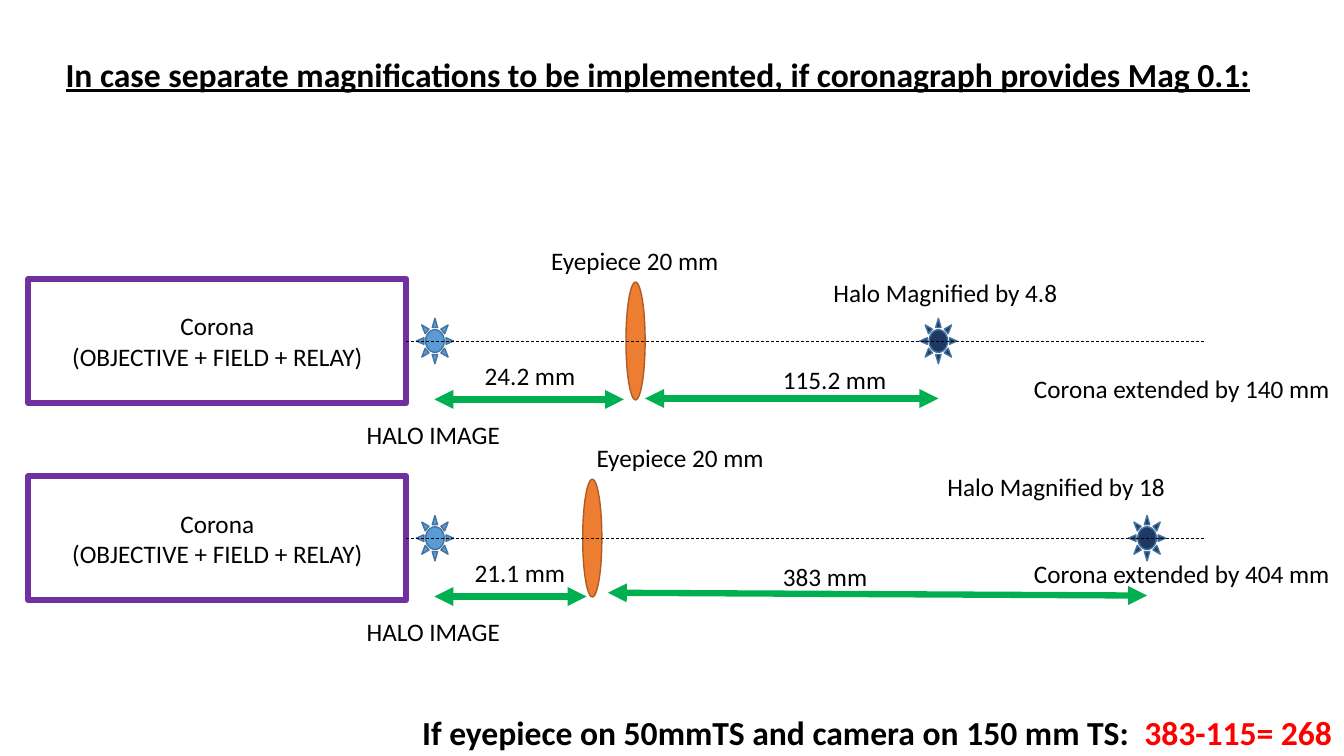
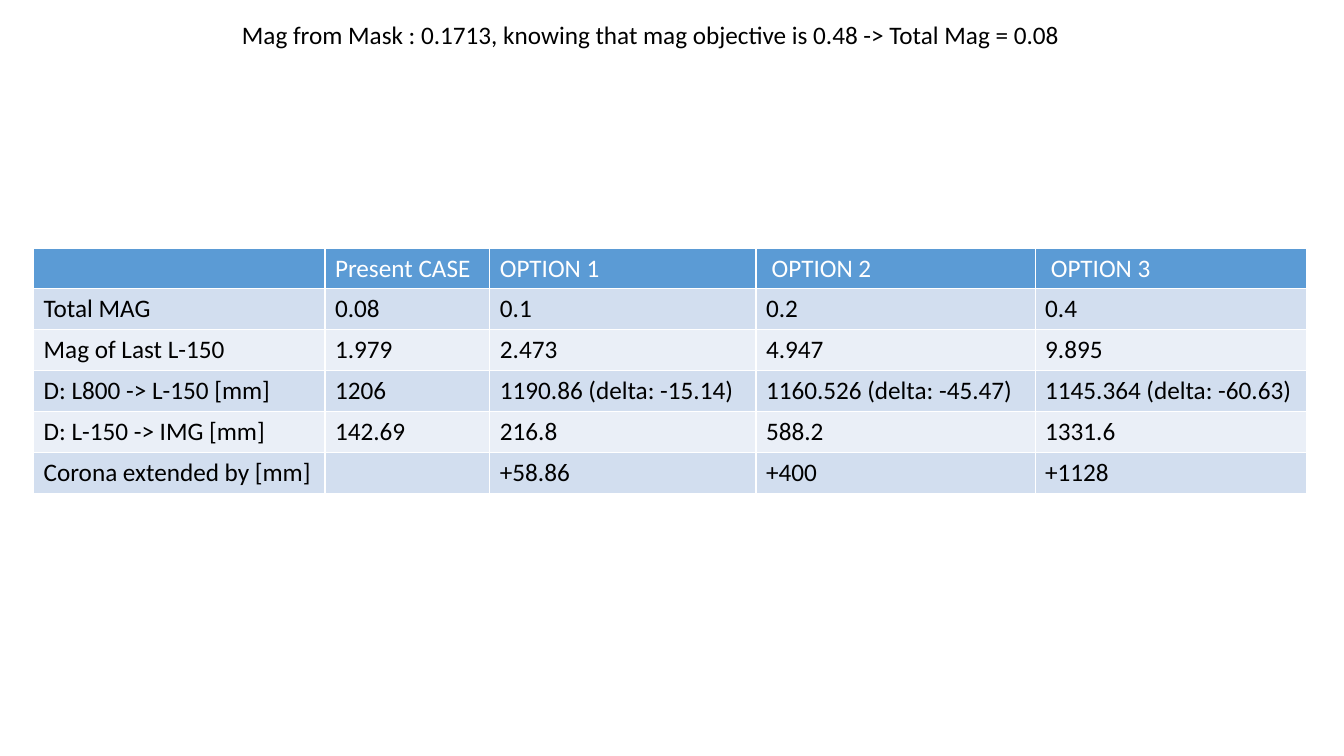
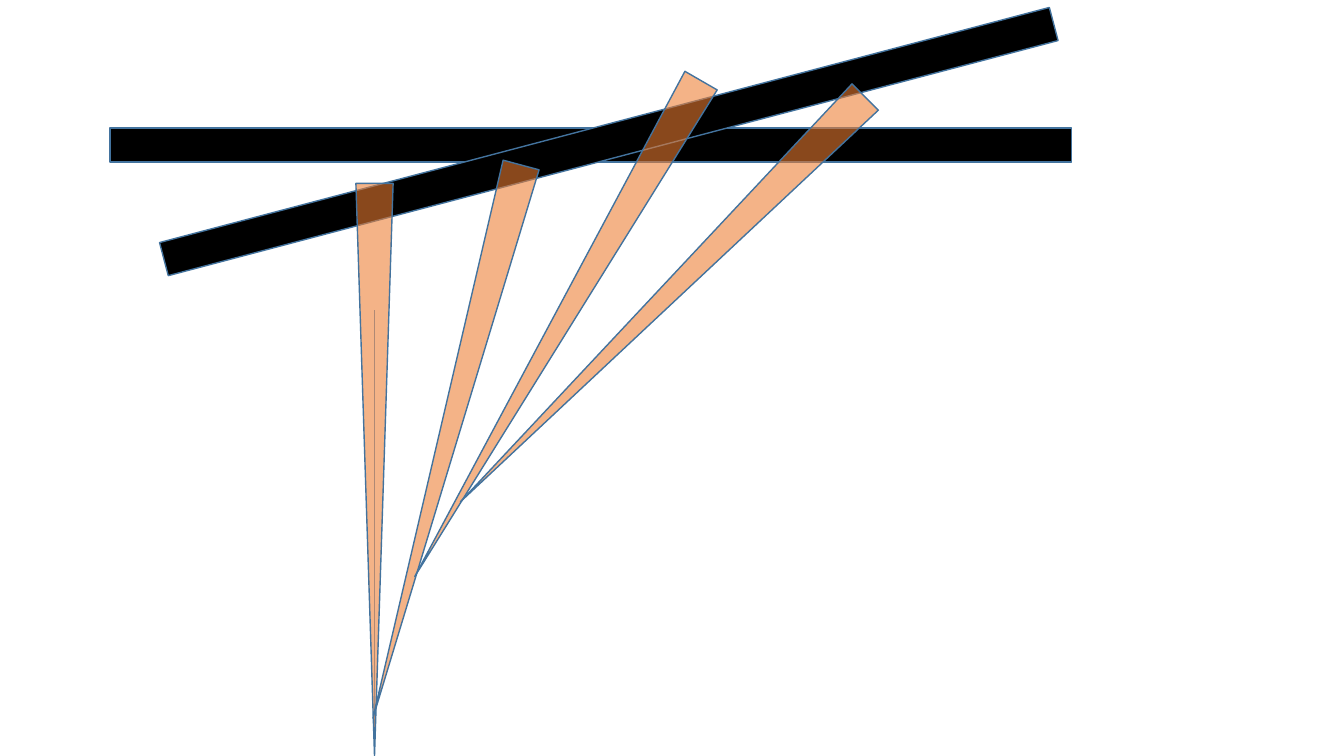
"""Build three slides on coronagraph magnification options."""
from lxml import etree
from pptx import Presentation
from pptx.dml.color import RGBColor
from pptx.enum import dml, shapes, text
from pptx.oxml import ns
from pptx.util import Pt

BLACK, WHITE, RED = "000000", "FFFFFF", "FF0000"
BLUE, OUTLINE, NAVY = "5B9BD5", "43739E", "203864"
ORANGE, BROWN, PURPLE, GREEN = "ED7D31", "AF5C24", "7030A0", "00B050"
BANDS = ["EAEFF7", "D2DEEF"]
LABEL_HEIGHT = 29


def color(value):
    return RGBColor.from_string(value)


def write(frame, words, size=18, ink=BLACK, bold=False):
    frame.text = words
    for paragraph in frame.paragraphs:
        for run in paragraph.runs:
            run.font.name = "Calibri"
            run.font.size = Pt(size)
            run.font.bold = bold
            run.font.color.rgb = color(ink)


presentation = Presentation()
presentation.slide_width = Pt(960)
presentation.slide_height = Pt(540)
title_only, blank = presentation.slide_layouts[5], presentation.slide_layouts[6]
diagram_slide, table_slide, beam_slide = [
    presentation.slides.add_slide(layout) for layout in (title_only, title_only, blank)]

titles = [
    (diagram_slide, "In case separate magnifications to be implemented, if coronagraph provides Mag 0.1:",
     24, True, 39.6, 34.6, 893.5, 36),
    (table_slide, "Mag from Mask : 0.1713, knowing that mag objective is 0.48 -> Total Mag = 0.08",
     18, False, 165.6, 10.1, 604.8, LABEL_HEIGHT),
]
for slide, words, size, strong, left, top, width, height in titles:
    title = slide.shapes.title
    title.left, title.top, title.width, title.height = Pt(left), Pt(top), Pt(width), Pt(height)
    frame = title.text_frame
    write(frame, words, size, bold=strong)
    frame.word_wrap = strong
    frame.auto_size = text.MSO_AUTO_SIZE.NONE
    frame.vertical_anchor = text.MSO_ANCHOR.TOP
    frame.paragraphs[0].alignment = text.PP_ALIGN.LEFT
    frame.paragraphs[0].runs[0].font.underline = strong

labels = [("If eyepiece on 50mmTS and camera on 150 mm TS:  ", 294.5, 504.7, 664.6, 24)]
lines = []
setups = [
    (243.6, 447.1, 445.7, 460.8, 670.3, 41, [
        ("Eyepiece 20 mm", 386.6, -72, 135.4), ("24.2 mm", 339.1, 10.5, 79.9),
        ("115.2 mm", 552.2, 13, 89.3), ("Halo Magnified by 4.8", 588.2, -49, 176.4),
        ("Corona extended by 140 mm", 731.5, 19.3, 228.2)]),
    (384.4, 416.2, 419, 434.2, 819.4, 39, [
        ("Eyepiece 20 mm", 419, -72, 135.4), ("21.1 mm", 331.9, 10.5, 79.9),
        ("383 mm", 552.2, 13, 75.6), ("Halo Magnified by 18", 669.6, -51, 172.1),
        ("Corona extended by 404 mm", 731.5, 10.9, 228.2)]),
]
kind = shapes.MSO_SHAPE
for axis, lens, lens_near, lens_far, focus, drop, captions in setups:
    parts = [
        (kind.RECTANGLE, 20.2, 270, 88.6, None, PURPLE, 4.5),
        (kind.SUN, 297.4, 26.6, 32.4, BLUE, OUTLINE, 1),
        (kind.OVAL, lens, 13.7, 84.2, ORANGE, BROWN, 1),
        (kind.SUN, focus - 13.3, 26.6, 32.4, NAVY, OUTLINE, 1),
    ]
    for preset, left, width, height, fill, edge, weight in parts:
        shape = diagram_slide.shapes.add_shape(
            preset, Pt(left), Pt(axis - height / 2), Pt(width), Pt(height))
        shape.shadow.inherit = False
        shape.line.color.rgb = color(edge)
        shape.line.width = Pt(weight)
        if fill:
            shape.fill.solid()
            shape.fill.fore_color.rgb = color(fill)
        else:
            shape.fill.background()
            write(shape.text_frame, "Corona\n(OBJECTIVE + FIELD + RELAY)")
            for paragraph in shape.text_frame.paragraphs:
                paragraph.alignment = text.PP_ALIGN.CENTER
            corona = shape
    lines += [
        (diagram_slide, 290.2, axis, 861.1, axis, BLACK, 0.5, corona),
        (diagram_slide, 310.3, axis + 41.7, lens_near, axis + 41.7, GREEN, 4.5, None),
        (diagram_slide, lens_far, axis + drop, focus, axis + 41, GREEN, 4.5, None),
    ]
    for words, left, offset, width in [("HALO IMAGE", 254.9, 52.2, 110.9)] + captions:
        labels.append((words, left, axis + offset, width, 18))

for words, left, top, width, size in labels:
    box = diagram_slide.shapes.add_textbox(Pt(left), Pt(top), Pt(width), Pt(size * 1.2 + 7.2))
    write(box.text_frame, words, size, bold=size > 18)
    box.text_frame.word_wrap = False
    box.text_frame.auto_size = text.MSO_AUTO_SIZE.SHAPE_TO_FIT_TEXT
    if size > 18:
        result = box.text_frame.paragraphs[0].add_run()
        result.text = "383-115= 268"
        result.font.name, result.font.size, result.font.bold = "Calibri", Pt(size), True
        result.font.color.rgb = color(RED)

rows = [
    ["", "Present CASE", "OPTION 1", " OPTION 2", " OPTION 3"],
    ["Total MAG", "0.08", "0.1", "0.2", "0.4"],
    ["Mag of Last L-150", "1.979", "2.473", "4.947", "9.895"],
    ["D: L800 -> L-150 [mm]", "1206", "1190.86 (delta: -15.14)",
     "1160.526 (delta: -45.47)", "1145.364 (delta: -60.63)"],
    ["D: L-150 -> IMG [mm]", "142.69", "216.8", "588.2", "1331.6"],
    ["Corona extended by [mm]", "", "+58.86", "+400", "+1128"],
]
widths = [208.1, 117.8, 190.1, 199.4, 193.7]
table = table_slide.shapes.add_table(
    len(rows), len(widths), Pt(24), Pt(177.1), Pt(sum(widths)), Pt(29.2 * len(rows))).table
for column, width in zip(table.columns, widths):
    column.width = Pt(width)
for row_index, row in enumerate(rows):
    for column_index, words in enumerate(row):
        cell = table.cell(row_index, column_index)
        cell.fill.solid()
        cell.fill.fore_color.rgb = color(BANDS[row_index % 2] if row_index else BLUE)
        write(cell.text_frame, words, ink=BLACK if row_index else WHITE)
        cell.text_frame.paragraphs[0].font.size = Pt(18)

lines.append((beam_slide, 267.1, 221.8, 267.1, 540, BLUE, 0.5, None))
for slide, start_x, start_y, end_x, end_y, ink, weight, source in lines:
    connector = slide.shapes.add_connector(
        shapes.MSO_CONNECTOR.STRAIGHT, Pt(start_x), Pt(start_y), Pt(end_x), Pt(end_y))
    connector.line.color.rgb = color(ink)
    connector.line.width = Pt(weight)
    properties = connector.element.spPr
    if source:
        connector.line.dash_style = dml.MSO_LINE.DASH
        connector.begin_connect(source, 3)
    if ink == GREEN:
        for end in ("a:headEnd", "a:tailEnd"):
            etree.SubElement(properties.find(ns.qn("a:ln")), ns.qn(end), type="triangle")
    etree.SubElement(properties, ns.qn("a:effectLst"))

beam_parts = [
    (kind.RECTANGLE, 78.5, 91.4, 686.9, 24.5, 0, BLACK),
    (kind.RECTANGLE, 106.2, 88.9, 657.4, 24.5, -14.8, BLACK),
]
for index, (left, top) in enumerate([(254.2, 131), (306, 110.9), (385.2, 30.2), (460.1, 9.4)]):
    beam_parts.append((kind.ISOSCELES_TRIANGLE, left, top, 26.6, 409, 180 + 15 * index, ORANGE))
for preset, left, top, width, height, angle, fill in beam_parts:
    shape = beam_slide.shapes.add_shape(preset, Pt(left), Pt(top), Pt(width), Pt(height))
    shape.shadow.inherit = False
    shape.rotation = angle
    shape.fill.solid()
    shape.fill.fore_color.rgb = color(fill)
    shape.line.color.rgb = color(OUTLINE)
    shape.line.width = Pt(1)
    if fill == ORANGE:
        tint = shape.element.spPr.find(ns.qn("a:solidFill"))[0]
        etree.SubElement(tint, ns.qn("a:alpha"), val="58000")

presentation.save("out.pptx")
